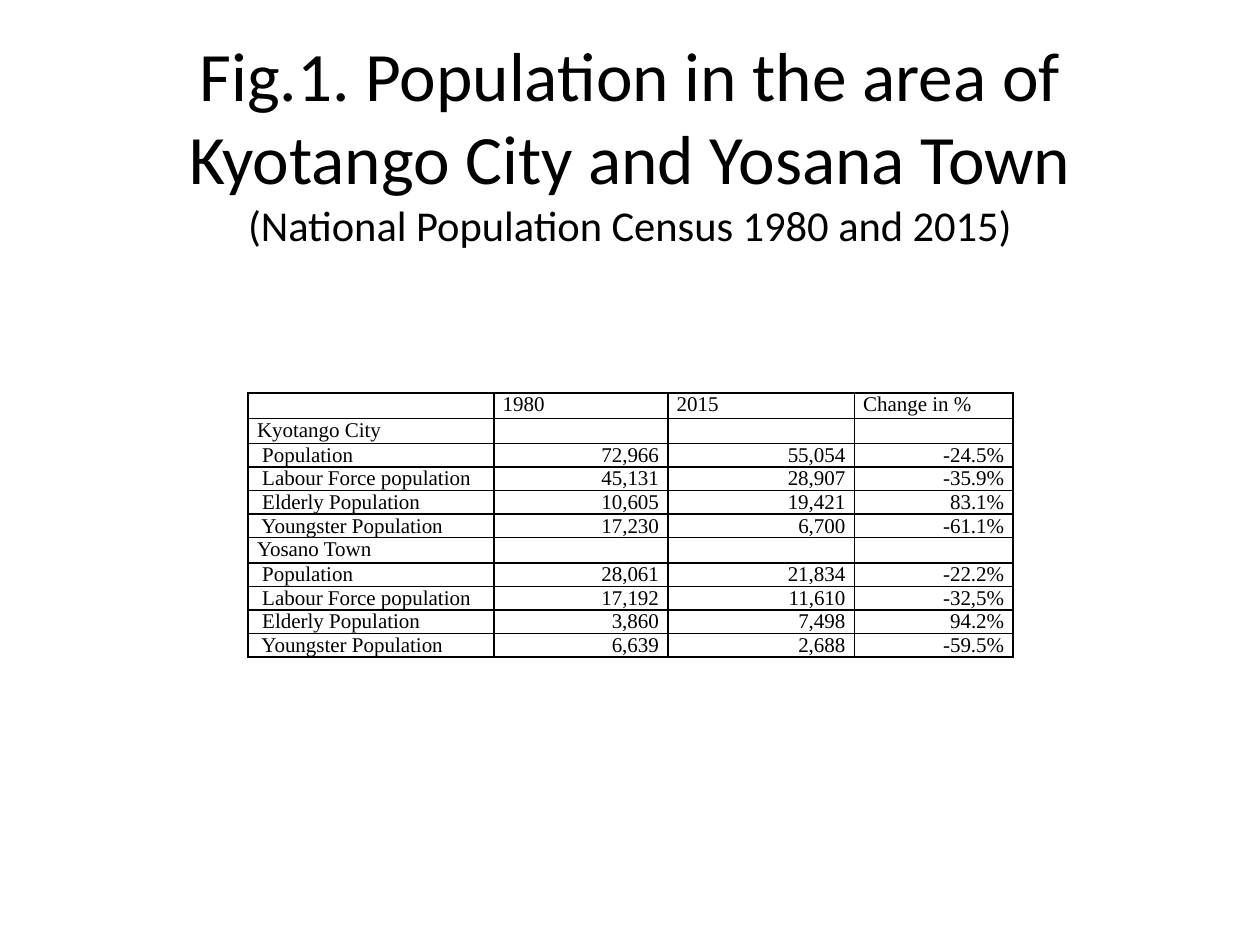
from dataclasses import dataclass
from lxml import etree
from pptx import Presentation
from pptx.dml.color import RGBColor
from pptx.enum.text import MSO_ANCHOR, PP_ALIGN
from pptx.oxml.ns import qn
from pptx.util import Inches, Pt

MID, TOP = MSO_ANCHOR.MIDDLE, MSO_ANCHOR.TOP
CENTER, RIGHT = PP_ALIGN.CENTER, PP_ALIGN.RIGHT
LEFT, JUST = PP_ALIGN.LEFT, PP_ALIGN.JUSTIFY


@dataclass
class Theme:
    ink: str = "000000"
    head: str = "Calibri"
    body: str = "Times New Roman"
    big: float = 39.6
    sub: float = 24.3
    small: float = 12
    lead: float = 13.4
    rule: float = 1


theme = Theme()


def style(font, face, size):
    font.name = face
    font.size = Pt(size)
    font.color.rgb = RGBColor.from_string(theme.ink)


def edge(cell):
    props = cell._tc.get_or_add_tcPr()
    for spot, side in enumerate(("lnL", "lnR", "lnT", "lnB")):
        line = etree.Element(qn(f"a:{side}"), w=str(Pt(theme.rule)))
        fill = etree.SubElement(line, qn("a:solidFill"))
        etree.SubElement(fill, qn("a:srgbClr"), val=theme.ink)
        props.insert(spot, line)


deck = Presentation()
deck.slide_width, deck.slide_height = Inches(10), Inches(7.5)
wide, high = deck.slide_width, deck.slide_height
slide = deck.slides.add_slide(deck.slide_layouts[6])

# Title with its source line
box = slide.shapes.add_textbox(
    int(wide * 0.05), int(high * 0.04), int(wide * 0.9), Inches(1.64))
frame = box.text_frame
frame.word_wrap = True
frame.vertical_anchor = MID
para = frame.paragraphs[0]
para.alignment = CENTER
run = para.add_run()
run.text = "Fig.1. Population in the area of Kyotango City and Yosana Town"
style(run.font, theme.head, theme.big)
para.add_line_break()
run = para.add_run()
run.text = "(National Population Census 1980 and 2015)"
style(run.font, theme.head, theme.sub)

# Census figures
rows = [
    ("", "1980", "2015", "Change in %"),
    ("Kyotango City", "", "", ""),
    (" Population", "72,966", "55,054", "-24.5%"),
    (" Labour Force population", "45,131", "28,907", "-35.9%"),
    (" Elderly Population", "10,605", "19,421", "83.1%"),
    (" Youngster Population", "17,230", "6,700", "-61.1%"),
    ("Yosano Town", "", "", ""),
    (" Population", "28,061", "21,834", "-22.2%"),
    (" Labour Force population", "17,192", "11,610", "-32,5%"),
    (" Elderly Population", "3,860", "7,498", "94.2%"),
    (" Youngster Population", "6,639", "2,688", "-59.5%"),
]
cols = (1.95, 1.38, 1.48, 1.26)
town = 6  # row where the second place starts

# Table grid
tall = Inches(2.05)
grid = slide.shapes.add_table(
    len(rows), len(cols), Inches(1.97), Inches(3.12),
    Inches(sum(cols)), tall).table
grid.first_row = grid.horz_banding = False
for col, size in zip(grid.columns, cols):
    col.width = Inches(size)

# Cells: labels to the left, figures to the right
for r, row in enumerate(rows):
    grid.rows[r].height = tall // len(rows)
    for c, text in enumerate(row):
        cell = grid.cell(r, c)
        cell.fill.background()
        edge(cell)
        cell.margin_left = cell.margin_right = Inches(0.07)
        cell.margin_top = cell.margin_bottom = 0
        cell.vertical_anchor = TOP
        para = cell.text_frame.paragraphs[0]
        para.line_spacing = Pt(theme.lead)
        if r and c:
            para.alignment = RIGHT
        else:
            para.alignment = LEFT if r > town else JUST
        style(para.font, theme.body, theme.small)
        if text:
            run = para.add_run()
            run.text = text
            style(run.font, theme.body, theme.small)
        else:
            etree.SubElement(para._p, qn("a:endParaRPr"),
                             sz=str(int(theme.small * 100)))

deck.save("out.pptx")
